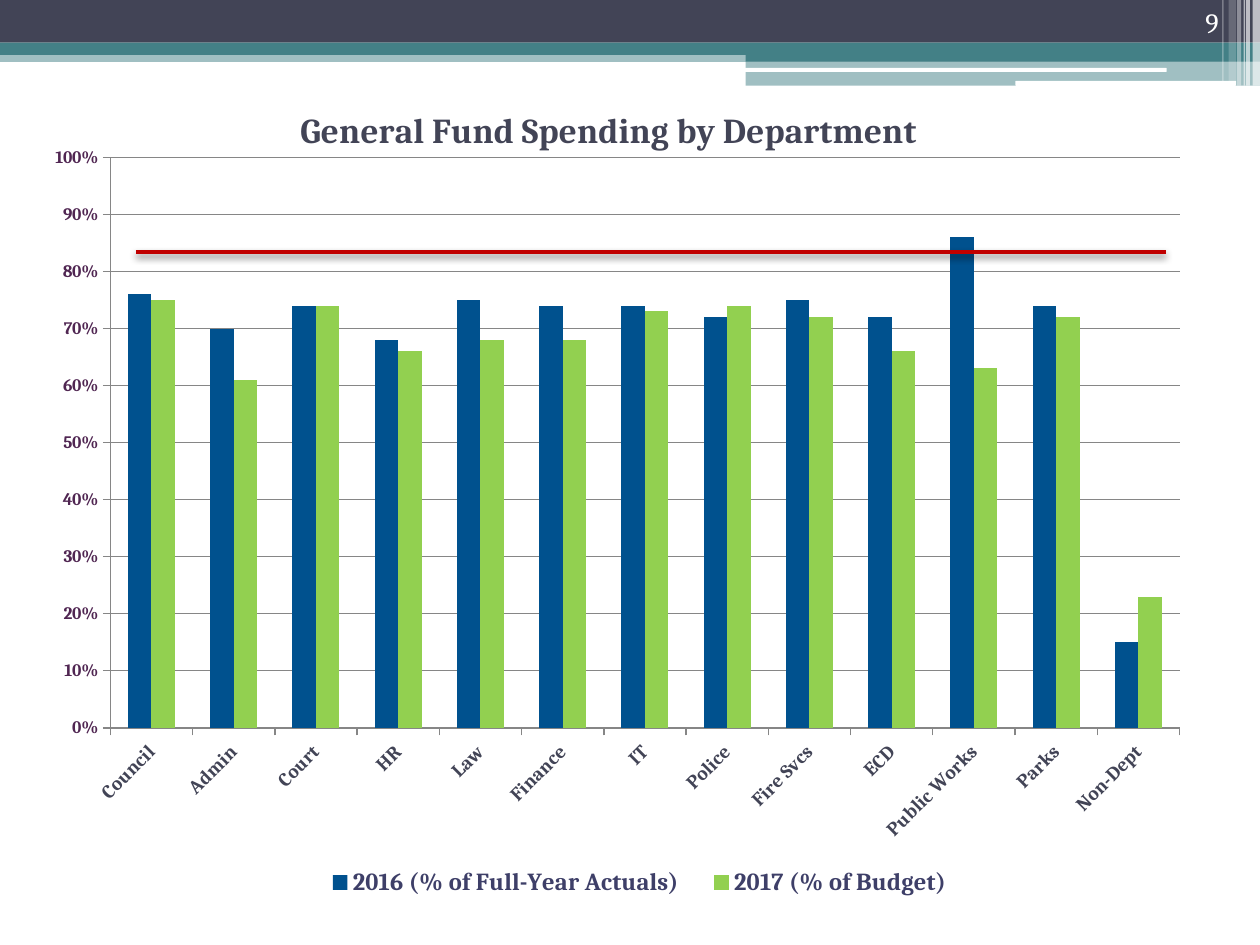
from lxml import etree
from pptx import Presentation
from pptx.chart.data import CategoryChartData
from pptx.dml.color import RGBColor
from pptx.enum.chart import XL_CHART_TYPE, XL_LEGEND_POSITION, XL_TICK_MARK
from pptx.enum.shapes import MSO_CONNECTOR, MSO_SHAPE
from pptx.enum.text import MSO_ANCHOR, PP_ALIGN
from pptx.oxml.ns import qn
from pptx.util import Cm, Pt

RECT, ROUNDED = MSO_SHAPE.RECTANGLE, MSO_SHAPE.ROUNDED_RECTANGLE
COLUMNS = XL_CHART_TYPE.COLUMN_CLUSTERED
BOTTOM_LEGEND = XL_LEGEND_POSITION.BOTTOM
TICK_OUT, TICK_NONE = XL_TICK_MARK.OUTSIDE, XL_TICK_MARK.NONE
STRAIGHT = MSO_CONNECTOR.STRAIGHT
ANCHOR_BOTTOM, ALIGN_RIGHT = MSO_ANCHOR.BOTTOM, PP_ALIGN.RIGHT

FONT = "Cambria"
NAVY, TEAL, WHITE, GRAY = "424456", "438086", "FFFFFF", "868686"

# Header bands: shape, left, top, width, height (cm), colour, opacity %
BANDS = [
    (RECT, 0, 1.02, 25.4, 0.23, TEAL, 50),
    (RECT, 0, 0, 25.4, 0.86, NAVY, 100),
    (RECT, 0, 0.86, 25.4, 0.25, TEAL, 100),
    (RECT, 15.03, 0.99, 10.37, 0.25, TEAL, 100),
    (RECT, 15.03, 1.23, 10.37, 0.5, TEAL, 50),
    (ROUNDED, 15.01, 1.37, 8.51, 0.08, WHITE, 100),
    (ROUNDED, 20.47, 1.63, 4.45, 0.1, WHITE, 100),
]
# Vertical stripes at the right edge: left, width, height (cm), opacity %
STRIPES = [
    (25.25, 0.15, 1.73, 65),
    (25.12, 0.08, 1.73, 65),
    (25.07, 0.03, 1.73, 60),
    (24.94, 0.08, 1.73, 40),
    (24.77, 0.15, 1.63, 20),
    (24.64, 0.03, 1.63, 30),
]
TITLE = "General Fund Spending by Department"
DEPARTMENTS = ["Council", "Admin", "Court", "HR", "Law", "Finance", "IT", "Police",
               "Fire Svcs", "ECD", "Public Works", "Parks", "Non-Dept"]
SERIES = [
    ("2016 (% of Full-Year Actuals)", "00518E",
     [0.76, 0.7, 0.74, 0.68, 0.75, 0.74, 0.74, 0.72, 0.75, 0.72, 0.86, 0.74, 0.15]),
    ("2017 (% of Budget)", "92D050",
     [0.75, 0.61, 0.74, 0.66, 0.68, 0.68, 0.73, 0.74, 0.72, 0.66, 0.63, 0.72, 0.23]),
]


def rgb(color):
    return RGBColor.from_string(color)


def style_font(font, size, color, bold=False):
    font.name, font.size, font.bold = FONT, Pt(size), bold
    font.color.rgb = rgb(color)


def add_band(slide, kind, left, top, width, height, color, opacity):
    sp = slide.shapes.add_shape(kind, Cm(left), Cm(top), Cm(width), Cm(height))
    sp.shadow.inherit = False
    sp.fill.solid()
    sp.fill.fore_color.rgb = rgb(color)
    sp.line.fill.background()
    if opacity < 100:
        clr = sp.element.spPr.find(qn("a:solidFill"))[0]
        etree.SubElement(clr, qn("a:alpha"), val=str(opacity * 1000))


def add_page_number(slide, number):
    tf = slide.shapes.add_textbox(Cm(22.71), Cm(0), Cm(2.11), Cm(0.91)).text_frame
    tf.word_wrap = True
    tf.vertical_anchor = ANCHOR_BOTTOM
    p = tf.paragraphs[0]
    p.text, p.alignment = number, ALIGN_RIGHT
    style_font(p.runs[0].font, 16, WHITE)


def place(parent, before, target=None, **fractions):
    """Give a chart part a manual position, in fractions of the chart."""
    for old in parent.findall(qn("c:layout")):
        parent.remove(old)
    layout = etree.Element(qn("c:layout"))
    manual = etree.SubElement(layout, qn("c:manualLayout"))
    if target:
        etree.SubElement(manual, qn("c:layoutTarget"), val=target)
    for axis in "xy":
        etree.SubElement(manual, qn(f"c:{axis}Mode"), val="edge")
    for key, value in fractions.items():
        etree.SubElement(manual, qn(f"c:{key}"), val=str(value))
    parent.find(qn(before)).addprevious(layout)


def style_axis(axis, size, color):
    axis.major_tick_mark, axis.minor_tick_mark = TICK_OUT, TICK_NONE
    axis.format.line.color.rgb = rgb(GRAY)
    style_font(axis.tick_labels.font, size, color, True)


def add_spending_chart(slide):
    data = CategoryChartData(number_format="0%")
    data.categories = DEPARTMENTS
    for name, _, values in SERIES:
        data.add_series(name, values)
    chart = slide.shapes.add_chart(COLUMNS, Cm(0.64), Cm(1.7), Cm(24.03), Cm(16.94),
                                   data).chart
    style_font(chart.font, 10, "000000")
    root = chart.element.find(qn("c:chart"))
    plot_area = root.find(qn("c:plotArea"))

    # Columns
    plot = chart.plots[0]
    plot.gap_width, plot.overlap, plot.vary_by_categories = 150, 0, False
    for series, (_, color, _) in zip(plot.series, SERIES):
        series.format.fill.solid()
        series.format.fill.fore_color.rgb = rgb(color)

    # Axes, with slanted department names
    style_axis(chart.category_axis, 11, NAVY)
    label_text = plot_area.find(qn("c:catAx")).find(qn("c:txPr"))
    label_text.find(qn("a:bodyPr")).set("rot", str(-45 * 60000))
    axis = chart.value_axis
    style_axis(axis, 10, "502652")
    axis.minimum_scale, axis.maximum_scale, axis.major_unit = 0, 1, 0.1
    axis.major_gridlines.format.line.color.rgb = rgb(GRAY)
    axis.tick_labels.number_format = "0%"
    axis.tick_labels.number_format_is_linked = False

    # Title and legend
    tf = chart.chart_title.text_frame
    tf.text = TITLE
    style_font(tf.paragraphs[0].runs[0].font, 20, NAVY, True)
    chart.has_legend = True
    chart.legend.position = BOTTOM_LEGEND
    chart.legend.include_in_layout = False
    style_font(chart.legend.font, 14, "3E3F68", True)

    # Positions
    title = root.find(qn("c:title"))
    title.find(qn("c:overlay")).set("val", "1")
    place(title, "c:overlay", x=0.22, y=0.02)
    place(root.find(qn("c:legend")), "c:overlay", x=0.23, y=0.92, w=0.56, h=0.06)
    place(plot_area, "c:barChart", "inner", x=0.066, y=0.087, w=0.897, h=0.679)


def add_target_line(slide):
    line = slide.shapes.add_connector(STRAIGHT, Cm(2.74), Cm(5.08), Cm(23.5), Cm(5.08))
    line.line.color.rgb = rgb("C00000")
    line.line.width = Pt(2.5)
    effects = etree.SubElement(line.element.spPr, qn("a:effectLst"))
    shadow = etree.SubElement(effects, qn("a:outerShdw"), blurRad=str(Pt(4)),
                              dist=str(Pt(2)), dir=str(90 * 60000), rotWithShape="0")
    clr = etree.SubElement(shadow, qn("a:srgbClr"), val="000000")
    etree.SubElement(clr, qn("a:alpha"), val="45000")


def main():
    prs = Presentation()
    prs.slide_width, prs.slide_height = Cm(25.4), Cm(19.05)
    slide = prs.slides.add_slide(prs.slide_layouts[6])
    for band in BANDS:
        add_band(slide, *band)
    for left, width, height, opacity in STRIPES:
        add_band(slide, RECT, left, 0, width, height, WHITE, opacity)
    add_page_number(slide, "9")
    add_spending_chart(slide)
    add_target_line(slide)
    prs.save("out.pptx")


if __name__ == "__main__":
    main()
